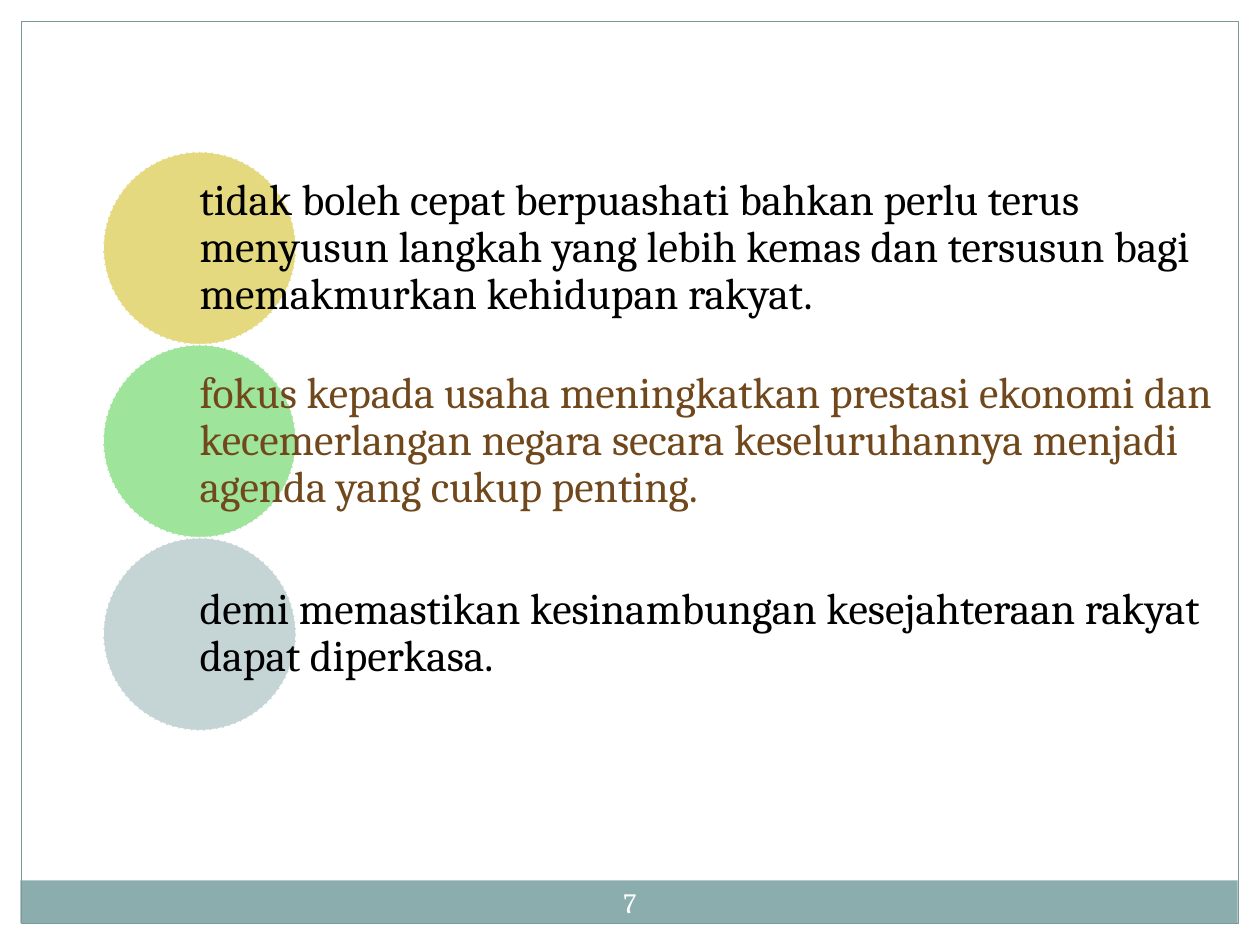
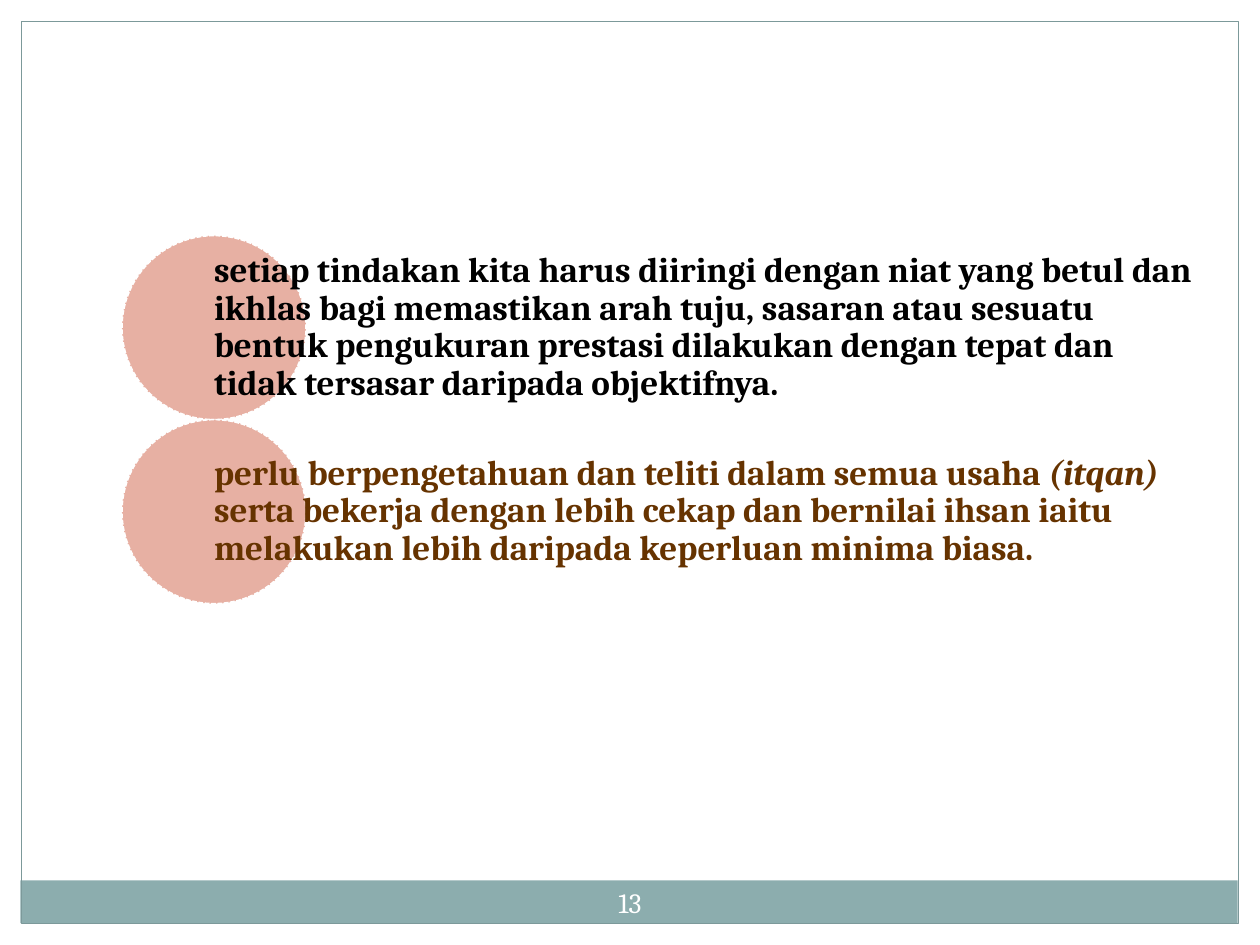
from lxml.etree import SubElement
from pptx import Presentation
from pptx.dml.color import RGBColor
from pptx.enum.dml import MSO_LINE
from pptx.enum.shapes import MSO_SHAPE
from pptx.enum.text import MSO_ANCHOR, PP_ALIGN
from pptx.oxml.ns import qn
from pptx.util import Cm, Pt

WHITE = RGBColor(0xFF, 0xFF, 0xFF)
BLACK = RGBColor(0x00, 0x00, 0x00)
TEAL = RGBColor(0x8C, 0xAD, 0xAE)
SLATE = RGBColor(0x7C, 0x99, 0x9A)
GOLD = RGBColor(0xCC, 0xB4, 0x00)
GREEN = RGBColor(0x3E, 0xCB, 0x38)
CORAL = RGBColor(0xD1, 0x63, 0x49)
BROWN = RGBColor(0x71, 0x48, 0x1C)
UMBER = RGBColor(0x66, 0x33, 0x00)

WIDE, HIGH, EDGE = 25.4, 19.05, 0.43


class Deck:
    font = "Cambria"

    def __init__(self):
        self.prs = Presentation()
        self.prs.slide_width, self.prs.slide_height = Cm(WIDE), Cm(HIGH)
        self.slide = None

    def shape(self, kind, box, fill=None, line=None, width=0.75):
        item = self.slide.shapes.add_shape(kind, *map(Cm, box))
        item.shadow.inherit = False
        if fill is None:
            item.fill.background()
        else:
            item.fill.solid()
            item.fill.fore_color.rgb = fill
        if line is None:
            item.line.fill.background()
        else:
            item.line.color.rgb = line
            item.line.width = Pt(width)
        return item

    def text(self, runs, box, size, color=BLACK, bold=False,
             align=PP_ALIGN.LEFT, pad=(0, 0.08), space=1.0):
        """Write runs, a list of (words, italic) pairs, as one paragraph."""
        frame = self.slide.shapes.add_textbox(*map(Cm, box)).text_frame
        frame.word_wrap = True
        frame.vertical_anchor = MSO_ANCHOR.MIDDLE
        frame.margin_left = frame.margin_right = Cm(pad[0])
        frame.margin_top = frame.margin_bottom = Cm(pad[1])
        para = frame.paragraphs[0]
        para.alignment, para.line_spacing = align, space
        for words, italic in runs:
            run = para.add_run()
            run.text = words
            font = run.font
            font.name, font.size = self.font, Pt(size)
            font.bold, font.italic = bold, italic
            font.color.rgb = color

    def circle(self, box, fill):
        """Draw a half-transparent disc with a dashed white rim."""
        disc = self.shape(MSO_SHAPE.OVAL, box, fill, WHITE, 0.9)
        disc.line.dash_style = MSO_LINE.SQUARE_DOT
        color = disc._element.spPr.find(qn("a:solidFill"))[0]
        SubElement(color, qn("a:alpha")).set("val", "50000")

    def page(self, number):
        """Start a slide with its margins, footer band, frame and number."""
        self.slide = self.prs.slides.add_slide(self.prs.slide_layouts[6])
        rect = MSO_SHAPE.RECTANGLE
        for box in ((0, 0, WIDE, EDGE), (WIDE - EDGE, 0, EDGE, HIGH),
                    (0, 0, EDGE, HIGH)):
            self.shape(rect, box, WHITE)
        self.shape(rect, (0.41, 17.75, 24.54, 0.86), TEAL)
        self.shape(rect, (EDGE, EDGE, WIDE - 2 * EDGE, 18.19), line=SLATE)
        self.text([(str(number), False)], (11.85, 17.58, 1.7, 1.22), 16, WHITE,
                  align=PP_ALIGN.CENTER, pad=(0.13, 0.13))

    def points(self, items, left, top, side, width, size, bold=False):
        """Stack touching circles; each text starts at its circle's centre."""
        for row, (fill, color, runs) in enumerate(items):
            y = top + row * side
            self.circle((left, y, side, side), fill)
            self.text(runs, (left + side / 2, y, width, side), size, color,
                      bold, space=0.9)


def main():
    deck = Deck()

    deck.page(7)
    deck.points([
        (GOLD, BLACK, [("tidak boleh cepat berpuashati bahkan perlu terus "
                        "menyusun langkah yang lebih kemas dan tersusun bagi "
                        "memakmurkan kehidupan rakyat.", False)]),
        (GREEN, BROWN, [("fokus kepada usaha meningkatkan prestasi ekonomi "
                         "dan kecemerlangan negara secara keseluruhannya "
                         "menjadi agenda yang cukup penting.", False)]),
        (TEAL, BLACK, [("demi memastikan kesinambungan kesejahteraan rakyat "
                        "dapat diperkasa.", False)]),
    ], left=2.08, top=3.06, side=3.89, width=20.75, size=25)

    deck.page(13)
    deck.points([
        (CORAL, BLACK, [("setiap tindakan kita harus diiringi dengan niat "
                         "yang betul dan ikhlas bagi memastikan arah tuju, "
                         "sasaran atau sesuatu bentuk pengukuran prestasi "
                         "dilakukan dengan tepat dan tidak tersasar daripada "
                         "objektifnya.", False)]),
        (CORAL, UMBER, [("perlu berpengetahuan dan teliti dalam semua usaha ",
                         False),
                        ("(itqan)", True),
                        (" serta bekerja dengan lebih cekap dan bernilai "
                         "ihsan iaitu melakukan lebih daripada keperluan "
                         "minima biasa.", False)]),
    ], left=2.46, top=4.75, side=3.71, width=19.81, size=20, bold=True)

    deck.prs.save("out.pptx")


if __name__ == "__main__":
    main()
